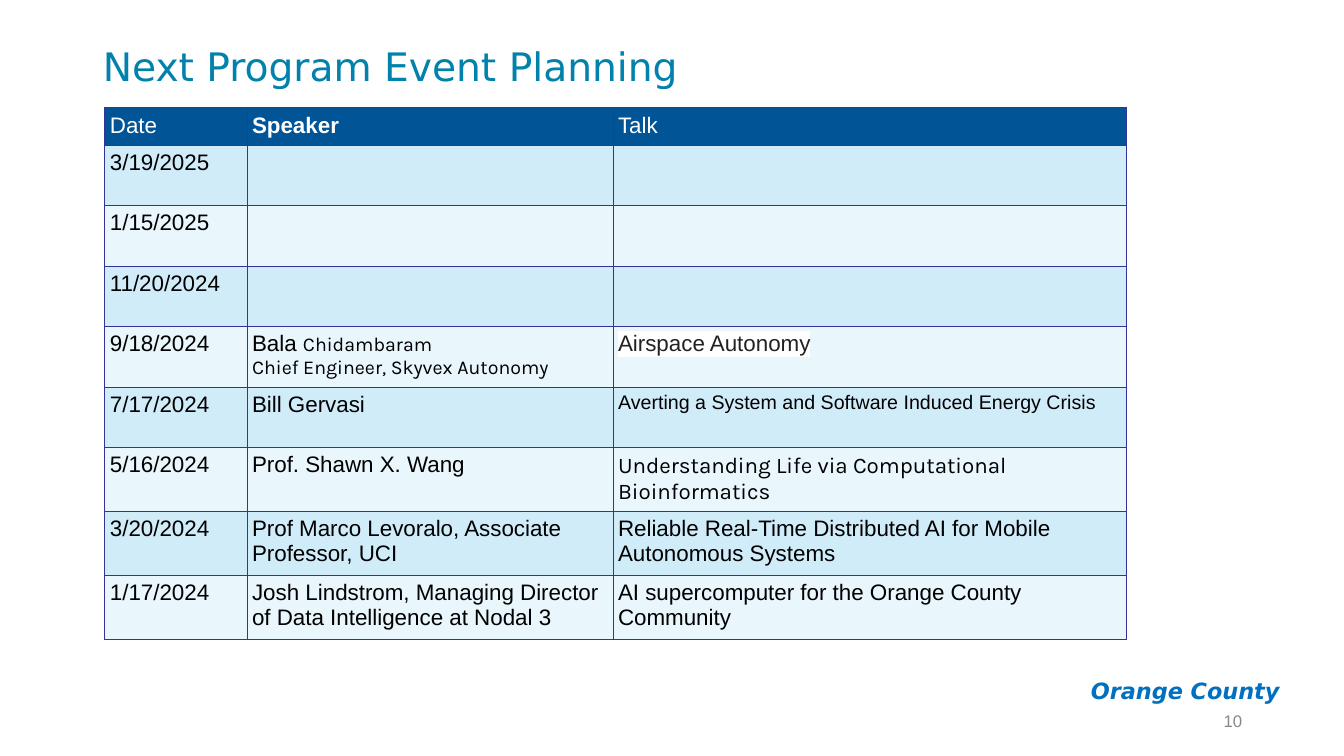
from lxml import etree
from pptx import Presentation
from pptx.dml.color import RGBColor
from pptx.enum import text as t
from pptx.oxml import ns
from pptx.util import Inches, Pt

WHITE = RGBColor(0xFF, 0xFF, 0xFF)
BLACK = RGBColor(0x00, 0x00, 0x00)
CHARCOAL = RGBColor(0x22, 0x22, 0x22)
GRAY = RGBColor(0x88, 0x88, 0x88)
TEAL = RGBColor(0x01, 0x82, 0xAC)
CHAPTER_BLUE = RGBColor(0x00, 0x70, 0xC0)
HEADER_BLUE = RGBColor(0x01, 0x55, 0x96)
BANDS = (RGBColor(0xD1, 0xEC, 0xF9), RGBColor(0xE9, 0xF6, 0xFC))
BORDER = RGBColor(0x33, 0x33, 0x99)

HEADINGS = ("Date", "Speaker", "Talk")
# A cell is a plain string or a list of (text, format) runs.
EVENTS = [
    ("3/19/2025", "", ""),
    ("1/15/2025", "", ""),
    ("11/20/2024", "", ""),
    ("9/18/2024",
     [("Bala ", {}),
      ("Chidambaram\nChief Engineer, Skyvex Autonomy", {"size": 14, "font": "Karla"})],
     [("Airspace Autonomy", {"color": CHARCOAL, "highlight": WHITE})]),
    ("7/17/2024", "Bill Gervasi",
     [("Averting a System and Software Induced Energy Crisis", {"size": 14})]),
    ("5/16/2024", "Prof. Shawn X. Wang",
     [("Understanding Life via Computational Bioinformatics", {"font": "Karla"})]),
    ("3/20/2024", "Prof Marco Levoralo, Associate Professor, UCI",
     "Reliable Real-Time Distributed AI for Mobile Autonomous Systems"),
    ("1/17/2024", "Josh Lindstrom, Managing Director of Data Intelligence at Nodal 3",
     "AI supercomputer for the Orange County Community"),
]


def add_text(paragraph, content, size=16, font="Arial", color=BLACK,
             bold=False, italic=False, highlight=None):
    """Append formatted text; a newline becomes a line break."""
    for index, line in enumerate(content.split("\n")):
        if index:
            paragraph.add_line_break()
        run = paragraph.add_run()
        run.text = line
        run.font.size = Pt(size)
        run.font.name = font
        run.font.bold = bold
        run.font.italic = italic
        run.font.color.rgb = color
        if highlight is not None:
            mark = etree.Element(ns.qn("a:highlight"))
            etree.SubElement(mark, ns.qn("a:srgbClr"), val=str(highlight))
            run.font._element.find(ns.qn("a:solidFill")).addnext(mark)


def set_borders(cell):
    properties = cell._tc.get_or_add_tcPr()
    for position, side in enumerate(("lnL", "lnR", "lnT", "lnB")):
        line = etree.Element(ns.qn(f"a:{side}"), w=str(Pt(0.75)))
        fill = etree.SubElement(line, ns.qn("a:solidFill"))
        etree.SubElement(fill, ns.qn("a:srgbClr"), val=str(BORDER))
        properties.insert(position, line)


class SlideBuilder:
    def __init__(self, presentation):
        self.slide = presentation.slides.add_slide(presentation.slide_layouts[5])

    def title(self, content, left, top, width, height):
        shape = self.slide.shapes.title
        shape.left, shape.top = Inches(left), Inches(top)
        shape.width, shape.height = Inches(width), Inches(height)
        frame = shape.text_frame
        frame.auto_size = t.MSO_AUTO_SIZE.NONE
        frame.vertical_anchor = t.MSO_ANCHOR.MIDDLE
        paragraph = frame.paragraphs[0]
        paragraph.alignment = t.PP_ALIGN.LEFT
        paragraph.line_spacing = 0.9
        add_text(paragraph, content, size=28, font="DejaVu Sans", color=TEAL)

    def right_label(self, content, left, top, width, height, margin=0.05,
                    anchor=t.MSO_ANCHOR.TOP, **style):
        shape = self.slide.shapes.add_textbox(
            Inches(left), Inches(top), Inches(width), Inches(height))
        frame = shape.text_frame
        frame.word_wrap = True
        frame.vertical_anchor = anchor
        frame.margin_top = frame.margin_bottom = Inches(margin)
        paragraph = frame.paragraphs[0]
        paragraph.alignment = t.PP_ALIGN.RIGHT
        add_text(paragraph, content, **style)

    def cell(self, cell, content, fill, **style):
        cell.fill.solid()
        cell.fill.fore_color.rgb = fill
        cell.margin_left = cell.margin_right = Inches(0.05)
        cell.margin_top = cell.margin_bottom = Inches(0.05)
        set_borders(cell)
        runs = [(content, {})] if isinstance(content, str) else content
        for words, changes in runs:
            if words:
                add_text(cell.text_frame.paragraphs[0], words, **{**style, **changes})

    def event_table(self, left, top, widths, header_height, row_height):
        heights = [header_height] + [row_height] * len(EVENTS)
        table = self.slide.shapes.add_table(
            len(heights), len(widths), Inches(left), Inches(top),
            Inches(sum(widths)), Inches(sum(heights))).table
        for column, width in zip(table.columns, widths):
            column.width = Inches(width)
        for row, height in zip(table.rows, heights):
            row.height = Inches(height)
        for column, heading in enumerate(HEADINGS):
            self.cell(table.cell(0, column), heading, HEADER_BLUE,
                      color=WHITE, bold=heading == "Speaker")
        for row, event in enumerate(EVENTS):
            for column, content in enumerate(event):
                self.cell(table.cell(row + 1, column), content, BANDS[row % 2])


def main():
    presentation = Presentation()
    presentation.slide_width, presentation.slide_height = Inches(13.33), Inches(7.5)
    builder = SlideBuilder(presentation)
    builder.right_label("Orange County", 10.51, 6.62, 2.28, 0.47, margin=0.1,
                        font="DejaVu Sans", color=CHAPTER_BLUE, bold=True, italic=True)
    builder.title("Next Program Event Planning", 0.92, 0.29, 11.5, 0.78)
    builder.right_label("10", 9.42, 6.95, 3, 0.4, anchor=t.MSO_ANCHOR.MIDDLE,
                        size=12, color=GRAY)
    builder.event_table(1.04, 1.07, (1.41, 3.63, 5.09), 0.37, 0.6)
    presentation.save("out.pptx")


if __name__ == "__main__":
    main()
